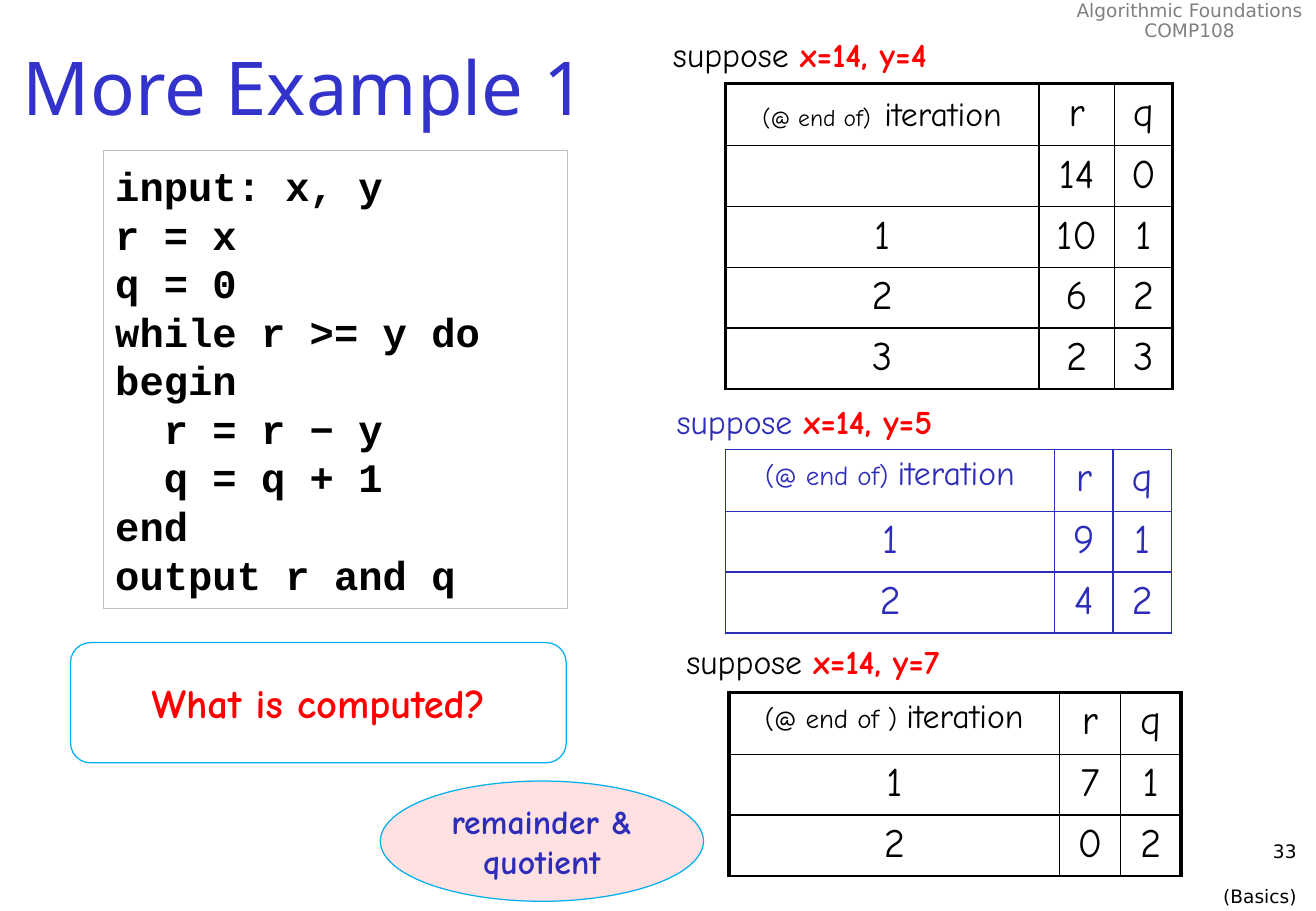
from lxml import etree
from pptx import Presentation
from pptx import util as u
from pptx.dml.color import RGBColor
from pptx.enum import shapes, text
from pptx.oxml.ns import qn

COLOURS = {
    "black": "000000", "grey": "808080", "silver": "C0C0C0", "title": "3333CC",
    "blue": "2D2DB9", "red": "FF0000", "cyan": "00B0F0", "pink": "FFE1E1",
}
HAND, SANS, TITLE, CODE = "Comic Neue", "DejaVu Sans", "Noto Sans", "Courier New"
GRID = u.Inches(0.1)
THICK, THIN = 2.25, 1
LEFT, CENTRE, RIGHT = text.PP_ALIGN.LEFT, text.PP_ALIGN.CENTER, text.PP_ALIGN.RIGHT


def colour(name):
    return RGBColor.from_string(COLOURS[name])


class Page:
    """Draws styled elements on one slide, measured in grid columns and rows."""

    def __init__(self, deck):
        self.shapes = deck.slides.add_slide(deck.slide_layouts[6]).shapes

    def place(self, *cells):
        return [round(cell * GRID) for cell in cells]

    def span(self, para, words, size, font, ink, bold=False):
        span = para.add_run()
        span.text = words
        span.font.size = u.Pt(size)
        span.font.name = font
        span.font.bold = bold
        span.font.color.rgb = colour(ink)

    def fill_text(self, frame, lines, align=LEFT, middle=False, wrap=True):
        frame.word_wrap = wrap
        frame.vertical_anchor = text.MSO_ANCHOR.MIDDLE if middle else text.MSO_ANCHOR.TOP
        for index, spans in enumerate(lines):
            para = frame.add_paragraph() if index else frame.paragraphs[0]
            para.alignment = align
            for span in spans:
                self.span(para, *span)
        return frame.paragraphs

    def label(self, area, lines, **layout):
        box = self.shapes.add_textbox(*self.place(*area))
        return self.fill_text(box.text_frame, lines, **layout)

    def panel(self, kind, area, line, lines, fill=None, align=CENTRE):
        box = self.shapes.add_shape(kind, *self.place(*area))
        box.shadow.inherit = False
        box.line.color.rgb = colour(line)
        box.line.width = u.Pt(0.75)
        if fill:
            box.fill.solid()
            box.fill.fore_color.rgb = colour(fill)
        else:
            box.fill.background()
        return self.fill_text(box.text_frame, lines, align=align, middle=True)

    def border(self, cell, side, width, ink):
        line = etree.SubElement(cell._tc.get_or_add_tcPr(), qn("a:ln" + side), w=str(u.Pt(width)))
        fill = etree.SubElement(line, qn("a:solidFill"))
        etree.SubElement(fill, qn("a:srgbClr"), val=COLOURS[ink])

    def trace(self, area, widths, heading, rows, ink, outer):
        values = [[None, "r", "q"], *rows]
        frame = self.shapes.add_table(len(values), len(widths), *self.place(*area))
        table = frame.table
        table.first_row = table.horz_banding = False
        for column, width in zip(table.columns, widths):
            column.width = self.place(width)[0]
        for r, row in enumerate(values):
            table.rows[r].height = self.place(5 if r else 5.1)[0]
            for c, value in enumerate(row):
                cell = table.cell(r, c)
                edges = {"L": c == 0, "R": c == len(widths) - 1, "T": r == 0, "B": False}
                for side, outside in edges.items():
                    self.border(cell, side, outer if outside else THIN, ink)
                cell.fill.background()
                spans = heading if value is None else [(value, 24)]
                if value != "":
                    self.entry(cell, spans, ink)

    def entry(self, cell, spans, ink):
        para = cell.text_frame.paragraphs[0]
        para.alignment = CENTRE
        for tag in ("a:spcBef", "a:spcAft"):
            gap = etree.SubElement(para._p.get_or_add_pPr(), qn(tag))
            etree.SubElement(gap, qn("a:spcPct"), val="20000")
        for words, size in spans:
            self.span(para, words, size, HAND, ink)


def main():
    deck = Presentation()
    deck.slide_width, deck.slide_height = u.Inches(10.83), u.Inches(7.5)
    page = Page(deck)

    course = ["Algorithmic Foundations", "COMP108"]
    for para in page.label((87.5, -0.4, 20.8, 4.3), [[(line, 11, SANS, "grey")] for line in course],
                           align=CENTRE, wrap=False):
        para.line_spacing = 0.9
    page.label((0.9, 0.8, 107.4, 12.5), [[("More Example 1", 44, TITLE, "title")]], middle=True)
    footer = page.label((85.1, 68.7, 22.6, 5),
                        [[(line, 11, SANS, "black")] for line in ("33", "(Basics)")], align=RIGHT)
    footer[1].space_before = u.Pt(13)

    code = [(0, "input: x, y"), (0, "r = x"), (0, "q = 0"), (0, "while r >= y do"), (0, "begin"),
            (1, "r = r − y"), (1, "q = q + 1"), (0, "end"), (0, "output r and q")]
    lines = page.panel(shapes.MSO_SHAPE.RECTANGLE, (8.5, 12.4, 38.2, 37.7), "silver",
                       [[(line, 24, CODE, "black", True)] for _, line in code], align=LEFT)
    for para, (depth, _) in zip(lines, code):
        para._p.get_or_add_pPr().set("marL", str(depth * u.Inches(0.4)))

    traces = [
        ((54.4, 2.3), "4", (59.7, 6.9), (25.8, 6.2, 4.8), "black", THICK,
         [("(@ end of)", 14), (" ", 24), ("iteration", 20)],
         [("", "14", "0"), ("1", "10", "1"), ("2", "6", "2"), ("3", "2", "3")]),
        ((54.7, 32.5), "5", (59.7, 37), (27.1, 4.8, 4.8), "blue", THIN,
         [("(@ end of) ", 16), ("iteration", 20)], [("1", "9", "1"), ("2", "4", "2")]),
        ((55.5, 52.3), "7", (60, 57), (27.2, 5, 5), "black", THICK,
         [("(@ end of ) ", 16), ("iteration", 20)], [("1", "7", "1"), ("2", "0", "2")]),
    ]
    for caption, y, corner, widths, ink, outer, heading, rows in traces:
        page.label((*caption, 27.7, 4.4), [[("suppose ", 20, HAND, ink),
                                            (f"x=14, y={y}", 20, HAND, "red", True)]])
        page.trace((*corner, sum(widths), 5.1 + 5 * len(rows)), widths, heading, rows, ink, outer)

    page.panel(shapes.MSO_SHAPE.ROUNDED_RECTANGLE, (5.8, 52.9, 40.8, 9.9), "cyan",
               [[("What is computed?", 24, HAND, "red", True)]])
    page.panel(shapes.MSO_SHAPE.OVAL, (31.3, 64.3, 26.6, 9.9), "cyan",
               [[("remainder & quotient", 20, HAND, "blue", True)]], fill="pink")
    deck.save("out.pptx")


if __name__ == "__main__":
    main()
